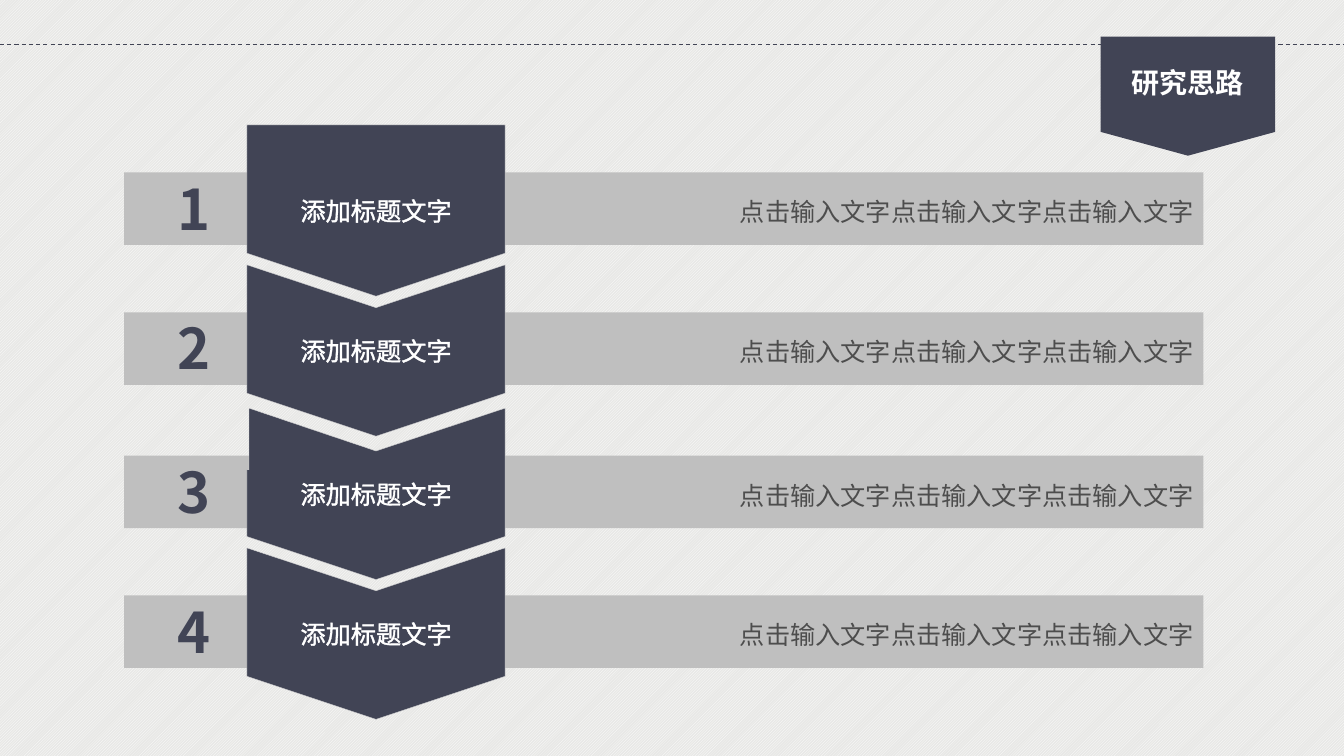
import dataclasses

import pptx
import pptx.dml.color
import pptx.enum.dml
import pptx.enum.shapes
import pptx.enum.text
import pptx.oxml
import pptx.oxml.ns
import pptx.util

Pt = pptx.util.Pt
Shape = pptx.enum.shapes.MSO_SHAPE
Align = pptx.enum.text.PP_ALIGN
FONT = "Noto Sans CJK SC"
NAVY, GREY, WHITE, TEXT = "414455", "BFBFBF", "FFFFFF", "4D4D4D"
BAR_LEFT, BAR_WIDTH, BAR_HEIGHT = 88.6, 771, 51.8
ARROW_LEFT, ARROW_WIDTH, ARROW_RISE = 176.4, 184.4, 33.9
SHOULDER, TIP, NOTCH = 91.7, 122.4, 30.6
STEP_INSET, STEP_DROP = 1.5, 43.9


@dataclasses.dataclass(frozen=True)
class Step:
    number: str
    bar_top: float
    notched: bool = True
    stepped: bool = False
    heading: str = "添加标题文字"
    detail: str = "点击输入文字点击输入文字点击输入文字"


STEPS = [
    Step("1", 123.1, notched=False),
    Step("2", 223.1),
    Step("3", 325.5, stepped=True),
    Step("4", 425.3),
]


def paint(color_format, color: str) -> None:
    color_format.rgb = pptx.dml.color.RGBColor.from_string(color)


def fill_shape(shape, color: str) -> None:
    shape.shadow.inherit = False
    shape.fill.solid()
    paint(shape.fill.fore_color, color)
    shape.line.fill.background()


def write(shape, text: str, size: float, color: str, align, bold: bool = False):
    frame = shape.text_frame
    frame.text = text
    frame.vertical_anchor = pptx.enum.text.MSO_ANCHOR.MIDDLE
    para = frame.paragraphs[0]
    para.alignment = align
    span = para.runs[0]
    span.font.size = Pt(size)
    span.font.bold = bold
    span.font.name = FONT
    paint(span.font.color, color)
    properties = span._r.get_or_add_rPr()
    east_asian = properties.makeelement(pptx.oxml.ns.qn("a:ea"), {"typeface": FONT})
    properties.find(pptx.oxml.ns.qn("a:latin")).addnext(east_asian)
    return para


def outline_text(para, color: str, width: float) -> None:
    line = pptx.oxml.parse_xml(
        f'<a:ln {pptx.oxml.ns.nsdecls("a")} w="{Pt(width)}"><a:solidFill>'
        f'<a:srgbClr val="{color}"/></a:solidFill></a:ln>'
    )
    para.runs[0]._r.get_or_add_rPr().insert(0, line)


def arrow_points(step: Step) -> list[tuple[float, float]]:
    top = step.bar_top - ARROW_RISE
    right, middle = ARROW_LEFT + ARROW_WIDTH, ARROW_LEFT + ARROW_WIDTH / 2
    points = [
        (right, top),
        (right, top + SHOULDER),
        (middle, top + TIP),
        (ARROW_LEFT, top + SHOULDER),
    ]
    if step.stepped:
        inner = ARROW_LEFT + STEP_INSET
        points += [(ARROW_LEFT, top + STEP_DROP), (inner, top + STEP_DROP), (inner, top)]
    else:
        points.append((ARROW_LEFT, top))
    if step.notched:
        points.append((middle, top + NOTCH))
    return points


def draw_bar(page, step: Step) -> None:
    bar = page.shapes.add_shape(
        Shape.RECTANGLE, Pt(BAR_LEFT), Pt(step.bar_top), Pt(BAR_WIDTH), Pt(BAR_HEIGHT)
    )
    fill_shape(bar, GREY)
    write(bar, step.detail, 18, TEXT, Align.RIGHT).line_spacing = 1.2

    box = page.shapes.add_textbox(Pt(100), Pt(step.bar_top - 2.5), Pt(77), Pt(55.4))
    box.text_frame.word_wrap = True
    write(box, step.number, 40, NAVY, Align.CENTER, bold=True)


def draw_arrow(page, step: Step) -> None:
    start, *others = [(Pt(x), Pt(y)) for x, y in arrow_points(step)]
    builder = page.shapes.build_freeform(*start)
    builder.add_line_segments(others, close=True)
    arrow = builder.convert_to_shape()
    fill_shape(arrow, NAVY)
    arrow.line.width = Pt(0.25)
    paint(arrow.line.color, "D7D7D7")
    arrow.text_frame.margin_left = arrow.text_frame.margin_right = 0
    outline_text(write(arrow, step.heading, 18, WHITE, Align.CENTER), WHITE, 0.75)


def draw_header(page) -> None:
    rule = page.shapes.add_connector(
        pptx.enum.shapes.MSO_CONNECTOR.STRAIGHT, 0, Pt(31.7), Pt(960), Pt(31.7)
    )
    rule.line.width = Pt(0.75)
    rule.line.dash_style = pptx.enum.dml.MSO_LINE.DASH
    paint(rule.line.color, NAVY)
    properties = rule._element.spPr
    properties.append(properties.makeelement(pptx.oxml.ns.qn("a:effectLst"), {}))

    badge = page.shapes.add_shape(
        Shape.FLOWCHART_OFFPAGE_CONNECTOR, Pt(786.2), Pt(26.2), Pt(124.7), Pt(85)
    )
    fill_shape(badge, NAVY)

    # The title sits in front of its badge
    title = page.shapes.title
    title.left, title.top, title.width, title.height = Pt(801), Pt(43), Pt(95), Pt(32)
    title.text_frame.word_wrap = False
    title.text_frame.auto_size = pptx.enum.text.MSO_AUTO_SIZE.NONE
    write(title, "研究思路", 20, WHITE, Align.CENTER, bold=True)
    page.shapes._spTree.append(title._element)


def main() -> None:
    deck = pptx.Presentation()
    deck.slide_width, deck.slide_height = Pt(960), Pt(540)
    page = deck.slides.add_slide(deck.slide_layouts.get_by_name("Title Only"))

    # Striped background
    backdrop = page.background.fill
    backdrop.patterned()
    backdrop.pattern = pptx.enum.dml.MSO_PATTERN.LIGHT_UPWARD_DIAGONAL
    paint(backdrop.fore_color, WHITE)
    paint(backdrop.back_color, "E8E8E6")

    # Header, then bars behind the arrow column
    draw_header(page)
    for step in STEPS:
        draw_bar(page, step)
    for step in STEPS:
        draw_arrow(page, step)

    deck.save("out.pptx")


if __name__ == "__main__":
    main()
